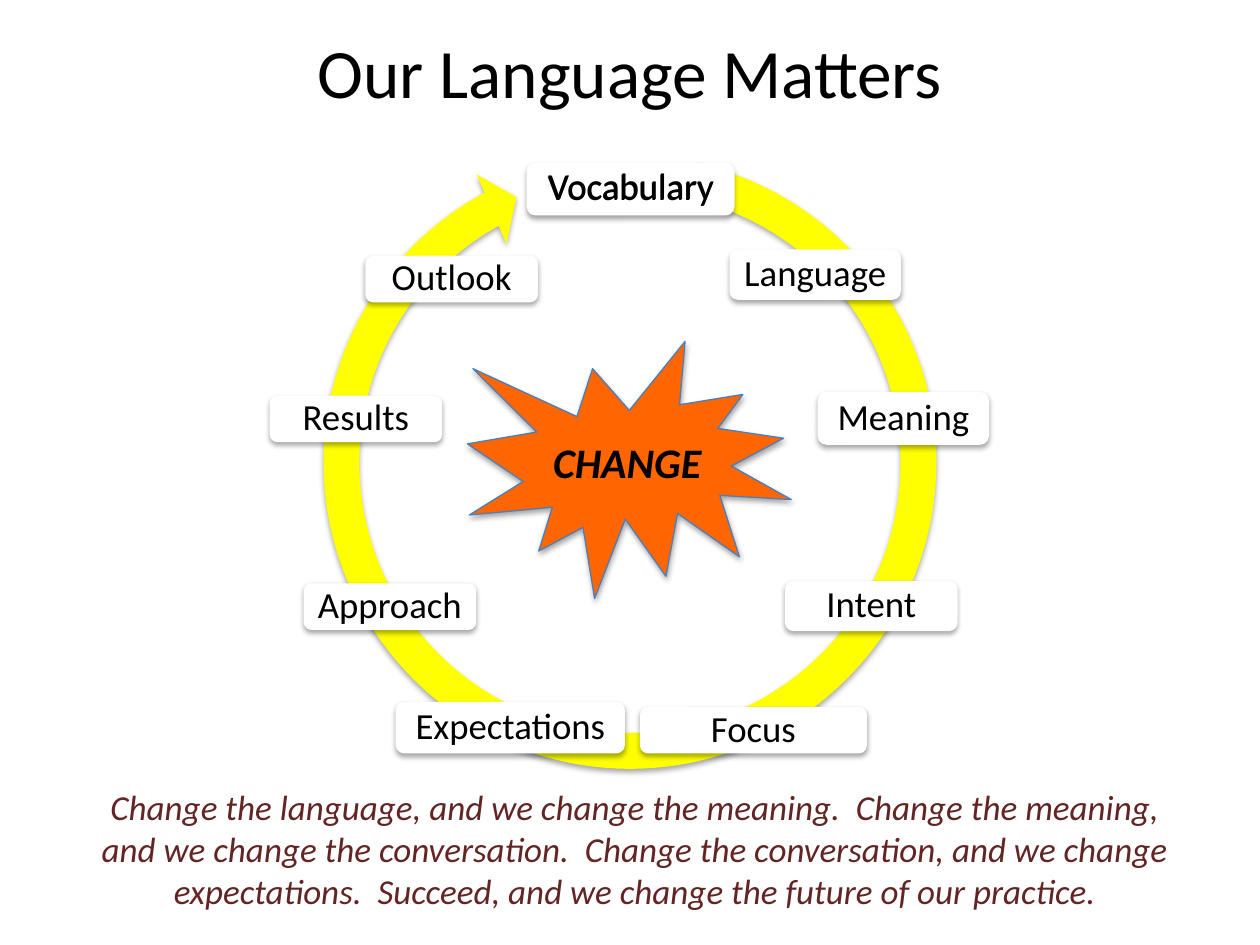
from dataclasses import dataclass

from lxml.etree import SubElement
from pptx import Presentation
from pptx.dml.color import RGBColor
from pptx.enum.shapes import MSO_SHAPE as Shape
from pptx.enum.text import MSO_ANCHOR as Anchor, MSO_AUTO_SIZE as AutoSize, PP_ALIGN as Align
from pptx.oxml.ns import qn
from pptx.util import Inches, Pt


@dataclass(frozen=True)
class Theme:
    font: str = "Calibri"
    text: str = "000000"
    quote: str = "632523"
    box: str = "FFFFFF"
    ring: str = "FFFF00"
    burst: str = "FF6600"
    burst_line: str = "4B7EBC"
    title_pt: float = 39.6
    label_pt: float = 21
    burst_pt: float = 24
    quote_pt: float = 20


@dataclass(frozen=True)
class Box:
    left: float
    top: float
    width: float
    height: float

    def lengths(self) -> tuple:
        return tuple(Inches(v) for v in (self.left, self.top, self.width, self.height))


@dataclass(frozen=True)
class Stage:
    text: str
    box: Box


THEME = Theme()
STAGES = (
    Stage("Vocabulary", Box(4.18, 1.29, 1.65, 0.42)),
    Stage("Language", Box(5.79, 1.98, 1.36, 0.4)),
    Stage("Meaning", Box(6.49, 3.11, 1.36, 0.42)),
    Stage("Intent", Box(6.23, 4.61, 1.37, 0.4)),
    Stage("Focus", Box(5.08, 5.61, 1.8, 0.37)),
    Stage("Expectations", Box(3.14, 5.57, 1.82, 0.41)),
    Stage("Approach", Box(2.41, 4.63, 1.37, 0.37)),
    Stage("Results", Box(2.14, 3.14, 1.37, 0.37)),
    Stage("Outlook", Box(2.9, 2.03, 1.37, 0.37)),
)
QUOTE = (
    "Change the language, and we change the meaning.  "
    "Change the meaning, and we change the conversation.  "
    "Change the conversation, and we change expectations.  "
    "Succeed, and we change the future of our practice."
)


def add_shadow(sp) -> None:
    """Give the shape a soft grey shadow falling straight down."""
    sp.shadow.inherit = False
    effects = sp._element.spPr.find(qn("a:effectLst"))
    shadow = SubElement(effects, qn("a:outerShdw"), blurRad=str(Pt(3.1)),
                        dist=str(Pt(1.8)), dir="5400000", rotWithShape="0")
    color = SubElement(shadow, qn("a:srgbClr"), val="000000")
    SubElement(color, qn("a:alpha"), val="35000")


def add_filled(slide, kind: Shape, box: Box, fill: str):
    sp = slide.shapes.add_shape(kind, *box.lengths())
    sp.fill.solid()
    sp.fill.fore_color.rgb = RGBColor.from_string(fill)
    sp.line.fill.background()
    add_shadow(sp)
    return sp


def set_text(sp, text: str, size: float, color: str = THEME.text,
             bold: bool = False, italic: bool = False):
    tf = sp.text_frame
    tf.word_wrap = True
    tf.vertical_anchor = Anchor.MIDDLE
    p = tf.paragraphs[0]
    p.text = text
    p.alignment = Align.CENTER
    p.font.name, p.font.size = THEME.font, Pt(size)
    p.font.bold, p.font.italic = bold, italic
    p.font.color.rgb = RGBColor.from_string(color)
    return tf


def add_title(slide) -> None:
    title = slide.shapes.title
    title.left, title.top, title.width, title.height = Box(0.5, 0.18, 9, 0.77).lengths()
    set_text(title, "Our Language Matters", THEME.title_pt)


def add_ring(slide) -> None:
    ring = add_filled(slide, Shape.CIRCULAR_ARROW, Box(2.41, 1.08, 5.18, 5.18), THEME.ring)
    for i, value in enumerate((0.055, 3.307, 144.799, 169.708, 0.058)):
        ring.adjustments[i] = value


def add_stage(slide, stage: Stage) -> None:
    sp = add_filled(slide, Shape.ROUNDED_RECTANGLE, stage.box, THEME.box)
    tf = set_text(sp, stage.text, THEME.label_pt)
    tf.margin_left = tf.margin_right = tf.margin_top = tf.margin_bottom = Inches(0.09)
    tf.paragraphs[0].line_spacing = 0.9


def add_burst(slide) -> None:
    burst = add_filled(slide, Shape.EXPLOSION1, Box(3.71, 2.71, 2.57, 2.04), THEME.burst)
    burst.line.color.rgb = RGBColor.from_string(THEME.burst_line)
    burst.line.width = Pt(0.75)
    set_text(burst, "CHANGE", THEME.burst_pt, bold=True, italic=True)


def main() -> None:
    prs = Presentation()
    prs.slide_width, prs.slide_height = Inches(10), Inches(7.5)
    slide = prs.slides.add_slide(prs.slide_layouts[5])
    add_title(slide)
    add_ring(slide)
    for stage in STAGES:
        add_stage(slide, stage)
    add_burst(slide)
    quote = slide.shapes.add_textbox(*Box(0.54, 6.11, 9, 1.25).lengths())
    set_text(quote, QUOTE, THEME.quote_pt, THEME.quote, italic=True)
    overlay = slide.shapes.add_textbox(*Box(4.17, 1.24, 1.68, 0.45).lengths())
    tf = set_text(overlay, STAGES[0].text, THEME.label_pt)
    tf.vertical_anchor = Anchor.TOP
    tf.auto_size = AutoSize.SHAPE_TO_FIT_TEXT
    prs.save("out.pptx")


if __name__ == "__main__":
    main()
